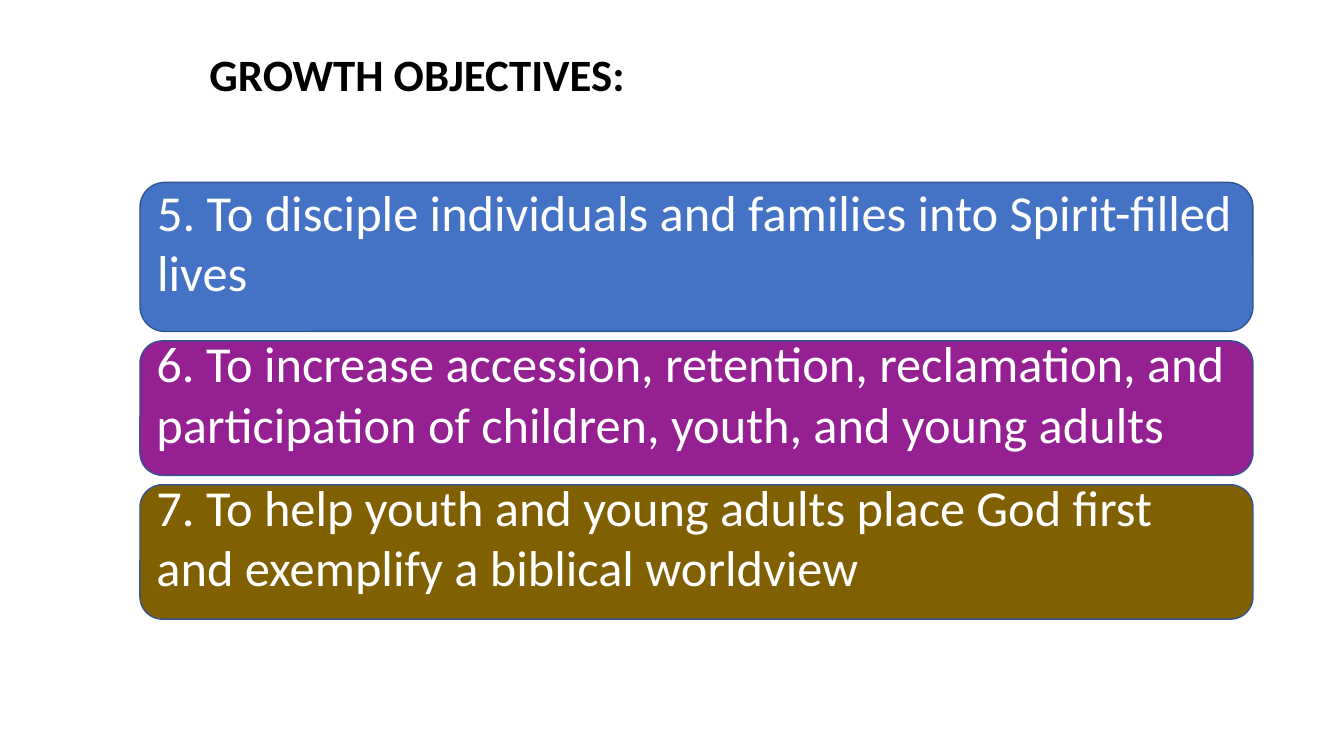
from pptx import Presentation
from pptx import util as u
from pptx.dml import color
from pptx.enum import shapes, text

COLORS = {"title": "000000", "text": "FFFFFF", "outline": "325491",
          "blue": "4472C4", "purple": "942092", "brown": "806000"}
OBJECTIVES = [
    ("5. To disciple individuals and families into Spirit-filled lives", "blue", 106.5),
    ("6. To increase accession, retention, reclamation, and participation of "
     "children, youth, and young adults", "purple", 96),
    ("7. To help youth and young adults place God first and exemplify a "
     "biblical worldview", "brown", 96),
]
LEFT, TOP, WIDTH, GAP = 100, 130.25, 795, 6.75


def rgb(name):
    return color.RGBColor.from_string(COLORS[name])


def write(tf, words, size, name, bold=False):
    tf.word_wrap = True
    tf.text = words
    p = tf.paragraphs[0]
    p.alignment = text.PP_ALIGN.LEFT
    font = p.runs[0].font
    font.name = "Calibri"
    font.size = u.Pt(size)
    font.bold = bold
    font.color.rgb = rgb(name)


prs = Presentation()
prs.slide_width, prs.slide_height = u.Pt(960), u.Pt(540)
s = prs.slides.add_slide(prs.slide_layouts[6])

title = s.shapes.add_textbox(u.Pt(142.5), u.Pt(29.5), u.Pt(480), u.Pt(46))
write(title.text_frame, "GROWTH OBJECTIVES:", 32, "title", bold=True)

top = TOP
for words, fill, height in OBJECTIVES:
    sp = s.shapes.add_shape(shapes.MSO_SHAPE.ROUNDED_RECTANGLE,
                            u.Pt(LEFT), u.Pt(top), u.Pt(WIDTH), u.Pt(height))
    sp.shadow.inherit = False
    sp.fill.solid()
    sp.fill.fore_color.rgb = rgb(fill)
    sp.line.color.rgb = rgb("outline")
    sp.line.width = u.Pt(1)
    tf = sp.text_frame
    tf.vertical_anchor = text.MSO_ANCHOR.MIDDLE
    tf.margin_bottom = u.Pt(25.6)
    write(tf, words, 36, "text")
    top += height + GAP

prs.save("out.pptx")
